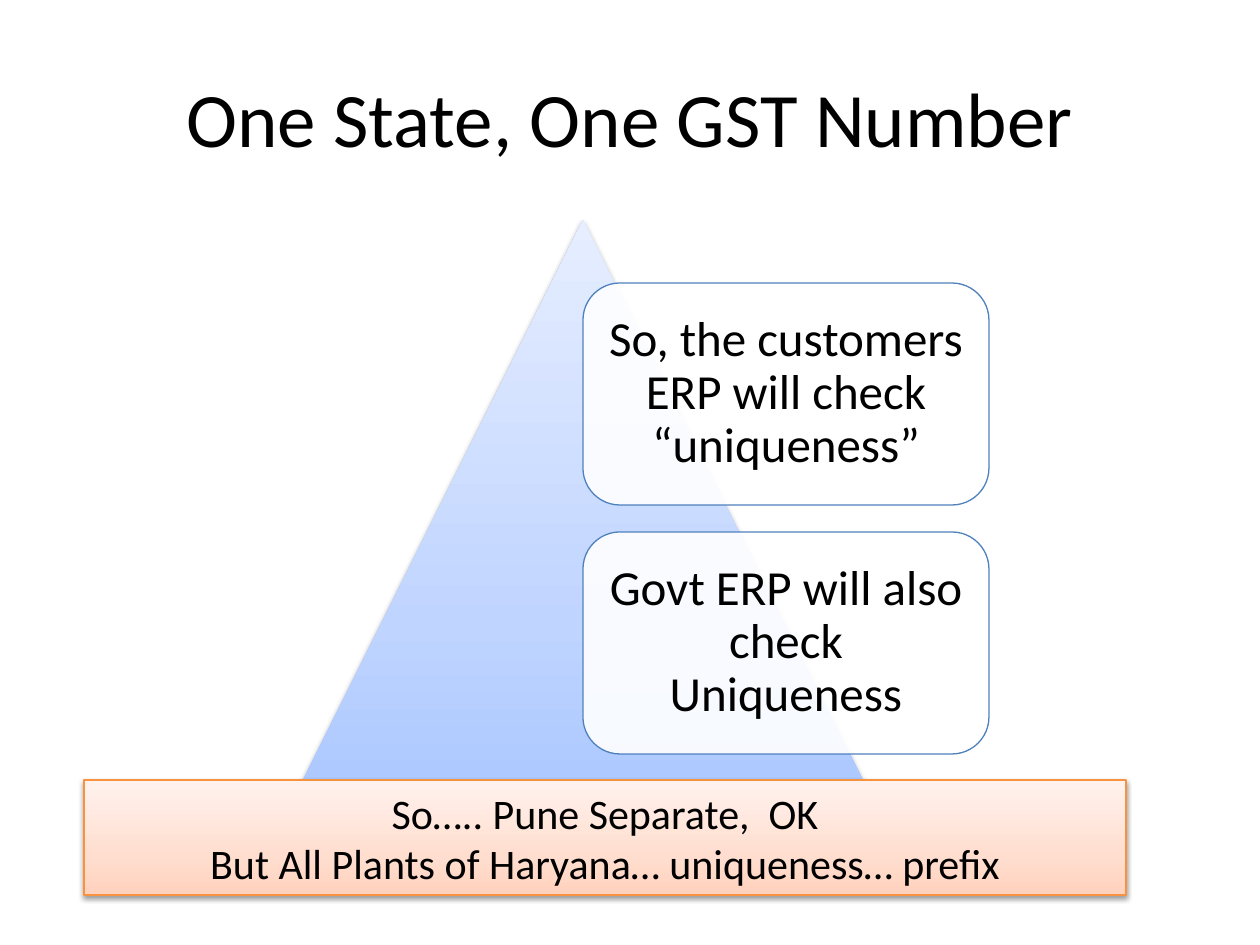
from lxml import etree
from pptx import Presentation
from pptx import util as u
from pptx.dml.color import RGBColor
from pptx.enum import shapes, text
from pptx.oxml import ns

SCALE = 914400 / 126
FONT = "Calibri"
COLORS = {
    "text": "000000",
    "card": "FFFFFF",
    "card_line": "4F81BD",
    "banner_line": "F69240",
    "shadow": "000000",
}
BLUES = ((0, "A4C4FF"), (35, "BFD4FF"), (100, "E6EEFF"))
ORANGES = ((0, "FFD2BD"), (35, "FFDED0"), (100, "FFF2ED"))


def px(value):
    return u.Emu(round(value * SCALE))


def add_child(parent, tag, **attributes):
    child = etree.SubElement(parent, ns.qn(tag))
    for name, value in attributes.items():
        child.set(name, str(value))
    return child


def write_text(shape, lines, size, inset=None, spacing=None):
    frame = shape.text_frame
    frame.word_wrap = True
    frame.vertical_anchor = text.MSO_ANCHOR.MIDDLE
    if inset is not None:
        frame.margin_left = frame.margin_right = px(inset)
        frame.margin_top = frame.margin_bottom = px(inset)
    for index, line in enumerate(lines):
        para = frame.add_paragraph() if index else frame.paragraphs[0]
        para.alignment = text.PP_ALIGN.CENTER
        if spacing:
            para.line_spacing = spacing
        span = para.add_run()
        span.text = line
        span.font.name = FONT
        span.font.size = u.Pt(size)
        span.font.color.rgb = RGBColor.from_string(COLORS["text"])


def add_box(page, kind, bounds, line=None):
    box = page.shapes.add_shape(kind, *map(px, bounds))
    box.shadow.inherit = False
    if line:
        box.line.color.rgb = RGBColor.from_string(COLORS[line])
        box.line.width = u.Pt(0.75)
    else:
        box.line.fill.background()
    return box


def set_gradient(shape, stops):
    shape.fill.gradient()
    shape.fill.gradient_angle = 90
    stop_list = shape._element.spPr.find(ns.qn("a:gradFill")).find(ns.qn("a:gsLst"))
    for old in list(stop_list):
        stop_list.remove(old)
    for position, color in stops:
        stop = add_child(stop_list, "a:gs", pos=position * 1000)
        add_child(stop, "a:srgbClr", val=color)


def set_shadow(shape):
    effects = shape._element.spPr.find(ns.qn("a:effectLst"))
    shadow = add_child(effects, "a:outerShdw", blurRad=u.Pt(3.1), dist=u.Pt(1.6),
                       dir=90 * 60000, rotWithShape=0)
    color = add_child(shadow, "a:srgbClr", val=COLORS["shadow"])
    add_child(color, "a:alpha", val=38000)


def add_title(page, wording):
    box = page.shapes.add_textbox(*map(px, (63, 38, 1134, 157)))
    write_text(box, [wording], 44)


def add_pyramid(page):
    pyramid = add_box(page, shapes.MSO_SHAPE.ISOSCELES_TRIANGLE, (271, 220, 624, 624))
    set_gradient(pyramid, BLUES)
    set_shadow(pyramid)


def add_card(page, top, wording):
    card = add_box(page, shapes.MSO_SHAPE.ROUNDED_RECTANGLE,
                   (583, top, 406, 222), "card_line")
    card.fill.solid()
    card.fill.fore_color.rgb = RGBColor.from_string(COLORS["card"])
    color = card._element.spPr.find(ns.qn("a:solidFill"))[0]
    add_child(color, "a:alpha", val=90000)
    write_text(card, [wording], 28, inset=15, spacing=0.9)


def add_banner(page, lines):
    banner = add_box(page, shapes.MSO_SHAPE.RECTANGLE, (84, 780, 1042, 115), "banner_line")
    set_gradient(banner, ORANGES)
    set_shadow(banner)
    write_text(banner, lines, 24)


def main():
    deck = Presentation()
    deck.slide_width, deck.slide_height = px(1260), px(945)
    page = deck.slides.add_slide(deck.slide_layouts[6])
    add_title(page, "One State, One GST Number")
    add_pyramid(page)
    cards = (
        "So, the customers ERP will check “uniqueness”",
        "Govt ERP will also check Uniqueness",
    )
    for index, wording in enumerate(cards):
        add_card(page, 283 + index * 249, wording)
    add_banner(page, (
        "So….. Pune Separate,  OK",
        "But All Plants of Haryana… uniqueness… prefix",
    ))
    deck.save("out.pptx")


if __name__ == "__main__":
    main()
